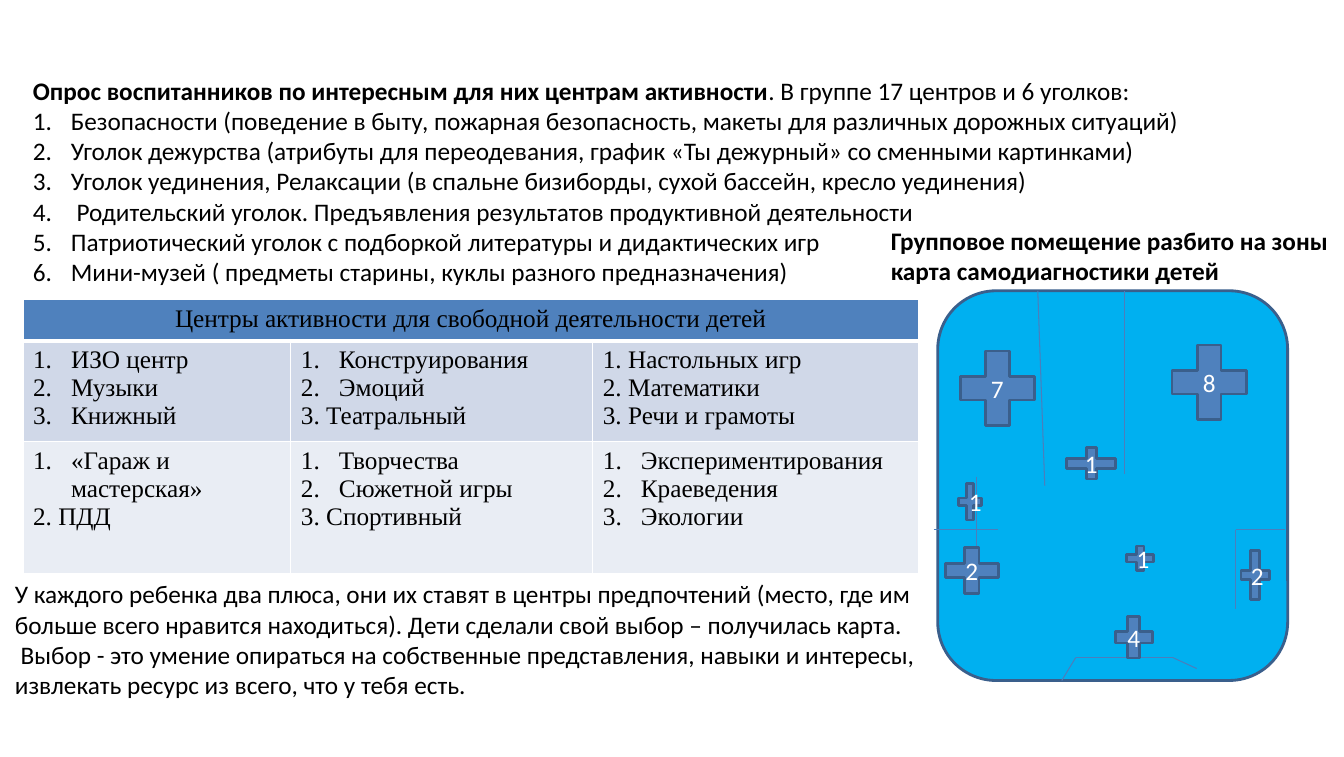
from lxml import etree
from pptx import Presentation
from pptx.dml.color import RGBColor
from pptx.enum.shapes import MSO_CONNECTOR, MSO_SHAPE
from pptx.enum.text import MSO_ANCHOR, PP_ALIGN
from pptx.oxml.ns import qn
from pptx.util import Inches, Pt

LINE, PLUS, ROUND = MSO_CONNECTOR.STRAIGHT, MSO_SHAPE.MATH_PLUS, MSO_SHAPE.ROUNDED_RECTANGLE
MIDDLE, CENTER = MSO_ANCHOR.MIDDLE, PP_ALIGN.CENTER
BLACK, WHITE = RGBColor(0, 0, 0), RGBColor(255, 255, 255)
SKY, BLUE = RGBColor(0x00, 0xB0, 0xF0), RGBColor(0x4F, 0x81, 0xBD)
OUTLINE, THIN_LINE = RGBColor(0x3A, 0x5F, 0x8C), RGBColor(0x4B, 0x7E, 0xBC)
BANDS = [BLUE, RGBColor(0xD0, 0xD8, 0xE8), RGBColor(0xE9, 0xED, 0xF4)]
SANS, SERIF = "Calibri", "Times New Roman"
INDENT = 38

CORNERS = [
    "Безопасности (поведение в быту, пожарная безопасность, макеты для различных дорожных ситуаций)",
    "Уголок дежурства (атрибуты для переодевания, график «Ты дежурный» со сменными картинками)",
    "Уголок уединения, Релаксации (в спальне бизиборды, сухой бассейн, кресло уединения)",
    " Родительский уголок. Предъявления результатов продуктивной деятельности",
    "Патриотический уголок с подборкой литературы и дидактических игр",
    "Мини-музей ( предметы старины, куклы разного предназначения)",
]
CONCLUSION = [
    "У каждого ребенка два плюса, они их ставят в центры предпочтений (место, где им",
    "больше всего нравится находиться). Дети сделали свой выбор – получилась карта.",
    " Выбор - это умение опираться на собственные представления, навыки и интересы,",
    "извлекать ресурс из всего, что у тебя есть.",
]
# Each cell: automatically numbered items, then plain items
CENTERS = [
    [(["ИЗО центр", "Музыки", "Книжный"], []),
     (["Конструирования", "Эмоций"], ["3. Театральный"]),
     ([], ["1. Настольных игр", "2. Математики", "3. Речи и грамоты"])],
    [(["«Гараж и мастерская»"], ["2. ПДД"]),
     (["Творчества", "Сюжетной игры"], ["3. Спортивный"]),
     (["Экспериментирования", "Краеведения", "Экологии"], [])],
]
# Map coordinates are relative to the room's top left corner
PARTITIONS = [
    (100, 0, 107, 195), (187, 0, 187, 183), (-4, 239, 60, 239),
    (39, 186, 39, 266), (298, 239, 347, 239), (298, 239, 298, 318),
    (138, 367, 124, 390), (138, 367, 235, 367), (235, 367, 259, 378),
]
VOTES = [
    ("7", 9, 47, 101, 101), ("8", 221, 41, 101, 101), ("2", -2, 249, 72, 62),
    ("2", 298, 251, 39, 67), ("4", 171, 318, 50, 57), ("1", 120, 151, 67, 43),
    ("1", 17, 186, 31, 50), ("1", 184, 251, 37, 33),
]


def px(n):
    return round(n * 914400 / 101)


def add_run(p, text, font=SANS, color=BLACK, bold=False):
    r = p.add_run()
    r.text = text
    r.font.name, r.font.size, r.font.bold = font, Pt(18), bold
    r.font.color.rgb = color


def add_paragraph(tf, text, numbered=False, **style):
    """Fill the empty first paragraph, or append another one."""
    p = tf.paragraphs[0]
    if p.runs:
        p = tf.add_paragraph()
    if numbered:
        pPr = p._p.get_or_add_pPr()
        pPr.set("marL", str(px(INDENT)))
        pPr.set("indent", str(-px(INDENT)))
        etree.SubElement(pPr, qn("a:buFont"), typeface="+mj-lt")
        etree.SubElement(pPr, qn("a:buAutoNum"), type="arabicPeriod")
    add_run(p, text, **style)
    return p


def add_text_box(slide, x, y, w, h):
    tf = slide.shapes.add_textbox(px(x), px(y), px(w), px(h)).text_frame
    tf.word_wrap = True
    return tf


def add_survey(slide, x, y, w, h):
    tf = add_text_box(slide, x, y, w, h)
    p = add_paragraph(tf, "Опрос воспитанников по интересным для них центрам активности", bold=True)
    add_run(p, ". В группе 17 центров и 6 уголков:")
    for corner in CORNERS:
        add_paragraph(tf, corner, numbered=True)


def add_map_caption(slide, x, y, w, h):
    tf = add_text_box(slide, x, y, w, h)
    add_paragraph(tf, "Групповое помещение разбито на зоны карта самодиагностики детей", bold=True)


def add_conclusion(slide, x, y, w, h):
    tf = add_text_box(slide, x, y, w, h)
    for line in CONCLUSION:
        add_paragraph(tf, line)


def add_outlined(slide, kind, fill, x, y, w, h):
    sp = slide.shapes.add_shape(kind, px(x), px(y), px(w), px(h))
    sp.shadow.inherit = False
    sp.fill.solid()
    sp.fill.fore_color.rgb = fill
    sp.line.color.rgb = OUTLINE
    sp.line.width = Pt(2)
    return sp


def add_room_map(slide, x, y, w, h):
    add_outlined(slide, ROUND, SKY, x, y, w, h)
    for x1, y1, x2, y2 in PARTITIONS:
        line = slide.shapes.add_connector(LINE, px(x + x1), px(y + y1), px(x + x2), px(y + y2))
        line.line.color.rgb = THIN_LINE
        line.line.width = Pt(0.75)
        etree.SubElement(line._element.spPr, qn("a:effectLst"))
    for count, dx, dy, width, height in VOTES:
        tf = add_outlined(slide, PLUS, BLUE, x + dx, y + dy, width, height).text_frame
        tf.vertical_anchor = MIDDLE
        add_paragraph(tf, count, color=WHITE).alignment = CENTER


def format_cell(cell, row):
    """White borders, thicker under the header, and the row's fill."""
    tcPr = cell._tc.get_or_add_tcPr()
    thick = {0: "lnB", 1: "lnT"}.get(row)
    for side in ("lnL", "lnR", "lnT", "lnB"):
        ln = etree.SubElement(tcPr, qn(f"a:{side}"), w=str(Pt(3 if side == thick else 1)))
        fill = etree.SubElement(ln, qn("a:solidFill"))
        etree.SubElement(fill, qn("a:srgbClr"), val=str(WHITE))
    cell.fill.solid()
    cell.fill.fore_color.rgb = BANDS[row]


def add_centers_table(slide, x, y, widths, heights):
    table = slide.shapes.add_table(len(heights), len(widths), px(x), px(y),
                                   px(sum(widths)), px(sum(heights))).table
    for col, width in zip(table.columns, widths):
        col.width = px(width)
    for i, (row, height) in enumerate(zip(table.rows, heights)):
        row.height = px(height)
        for cell in row.cells:
            format_cell(cell, i)
    header = table.cell(0, 0)
    header.merge(table.cell(0, len(widths) - 1))
    add_paragraph(header.text_frame, "Центры активности для свободной деятельности детей",
                  font=SERIF).alignment = CENTER
    for i, row in enumerate(CENTERS, 1):
        for j, (numbered, plain) in enumerate(row):
            tf = table.cell(i, j).text_frame
            for item in numbered:
                add_paragraph(tf, item, numbered=True, font=SERIF)
            for item in plain:
                add_paragraph(tf, item, font=SERIF)


def main():
    prs = Presentation()
    prs.slide_width, prs.slide_height = Inches(13.31), Inches(7.5)
    slide = prs.slides.add_slide(prs.slide_layouts[6])
    add_survey(slide, 23, 70, 1188, 286)
    add_room_map(slide, 938, 291, 350, 390)
    add_map_caption(slide, 881, 220, 466, 72)
    add_conclusion(slide, 5, 574, 1052, 132)
    add_centers_table(slide, 23, 300, [268, 302, 326], [41, 101, 132])
    prs.save("out.pptx")


if __name__ == "__main__":
    main()
